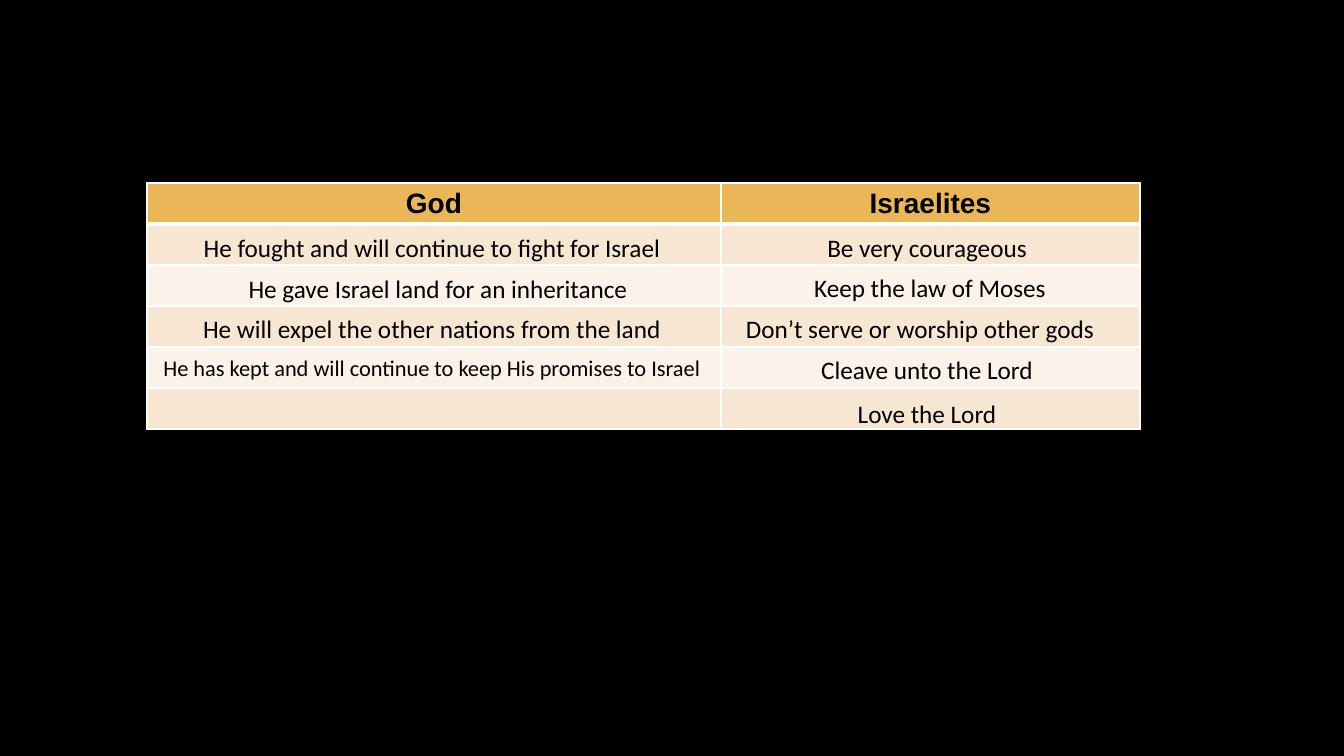
from lxml import etree
from pptx import Presentation
from pptx import util as u
from pptx.dml.color import RGBColor
from pptx.enum import text
from pptx.oxml.ns import qn

PX = 914400 / 100.8
BLACK, WHITE = "000000", "FFFFFF"
GOLD, SAND, CREAM = "E9B758", "F7E6D1", "FBF3EA"

HEADERS = ("God", "Israelites")
COLUMN_WIDTHS = (574, 419)
TABLE_LEFT, TABLE_TOP, ROW_HEIGHT, ROW_COUNT = 147, 183, 41, 6
BOX_HEIGHT = 40

# wording, centre x, top, width, font size
STATEMENTS = [
    ("He fought and will continue to fight for Israel", 432, 227, 483, 18),
    ("He gave Israel land for an inheritance", 438, 268, 405, 18),
    ("He will expel the other nations from the land", 432, 308, 484, 18),
    ("He has kept and will continue to keep His promises to Israel", 432, 349, 562, 16),
    ("Be very courageous", 927, 227, 226, 18),
    ("Keep the law of Moses", 930, 267, 252, 18),
    ("Don’t serve or worship other gods", 920, 308, 375, 18),
    ("Cleave unto the Lord", 927, 349, 238, 18),
    ("Love the Lord", 927, 393, 164, 18),
]


def px(length):
    return u.Emu(round(length * PX))


def colour(code):
    return RGBColor.from_string(code)


def write(frame, wording, font, size, bold=False):
    frame.text = wording
    para = frame.paragraphs[0]
    para.alignment = text.PP_ALIGN.CENTER
    for span in para.runs:
        span.font.name = font
        span.font.size = u.Pt(size)
        span.font.bold = bold
        span.font.color.rgb = colour(BLACK)


def add_borders(cell, top, bottom):
    """Draw white borders; top and bottom are widths in points."""
    properties = cell._tc.get_or_add_tcPr()
    for side, width in (("L", 1), ("R", 1), ("T", top), ("B", bottom)):
        line = etree.SubElement(properties, qn(f"a:ln{side}"), w=str(u.Pt(width)))
        fill = etree.SubElement(line, qn("a:solidFill"))
        etree.SubElement(fill, qn("a:srgbClr"), val=WHITE)


def add_grid(page):
    table = page.shapes.add_table(
        ROW_COUNT, len(HEADERS), px(TABLE_LEFT), px(TABLE_TOP),
        px(sum(COLUMN_WIDTHS)), px(ROW_HEIGHT * ROW_COUNT)).table
    for column, width in zip(table.columns, COLUMN_WIDTHS):
        column.width = px(width)
    for index, row in enumerate(table.rows):
        row.height = px(ROW_HEIGHT)
        shade = GOLD if index == 0 else SAND if index % 2 else CREAM
        for cell in row.cells:
            add_borders(cell, 3 if index == 1 else 1, 3 if index == 0 else 1)
            cell.fill.solid()
            cell.fill.fore_color.rgb = colour(shade)
            cell.margin_top = cell.margin_bottom = px(3)
            cell.vertical_anchor = text.MSO_ANCHOR.MIDDLE
    for cell, heading in zip(table.rows[0].cells, HEADERS):
        write(cell.text_frame, heading, "Arial", 20, bold=True)


def add_statement(page, wording, centre, top, width, size):
    box = page.shapes.add_textbox(
        px(centre - width / 2), px(top), px(width), px(BOX_HEIGHT))
    box.text_frame.word_wrap = False
    box.text_frame.auto_size = text.MSO_AUTO_SIZE.SHAPE_TO_FIT_TEXT
    write(box.text_frame, wording, "Calibri", size)


def main():
    deck = Presentation()
    deck.slide_width, deck.slide_height = px(1344), px(756)
    page = deck.slides.add_slide(deck.slide_layouts[6])
    page.background.fill.solid()
    page.background.fill.fore_color.rgb = colour(BLACK)
    add_grid(page)
    for statement in STATEMENTS:
        add_statement(page, *statement)
    deck.save("out.pptx")


if __name__ == "__main__":
    main()
